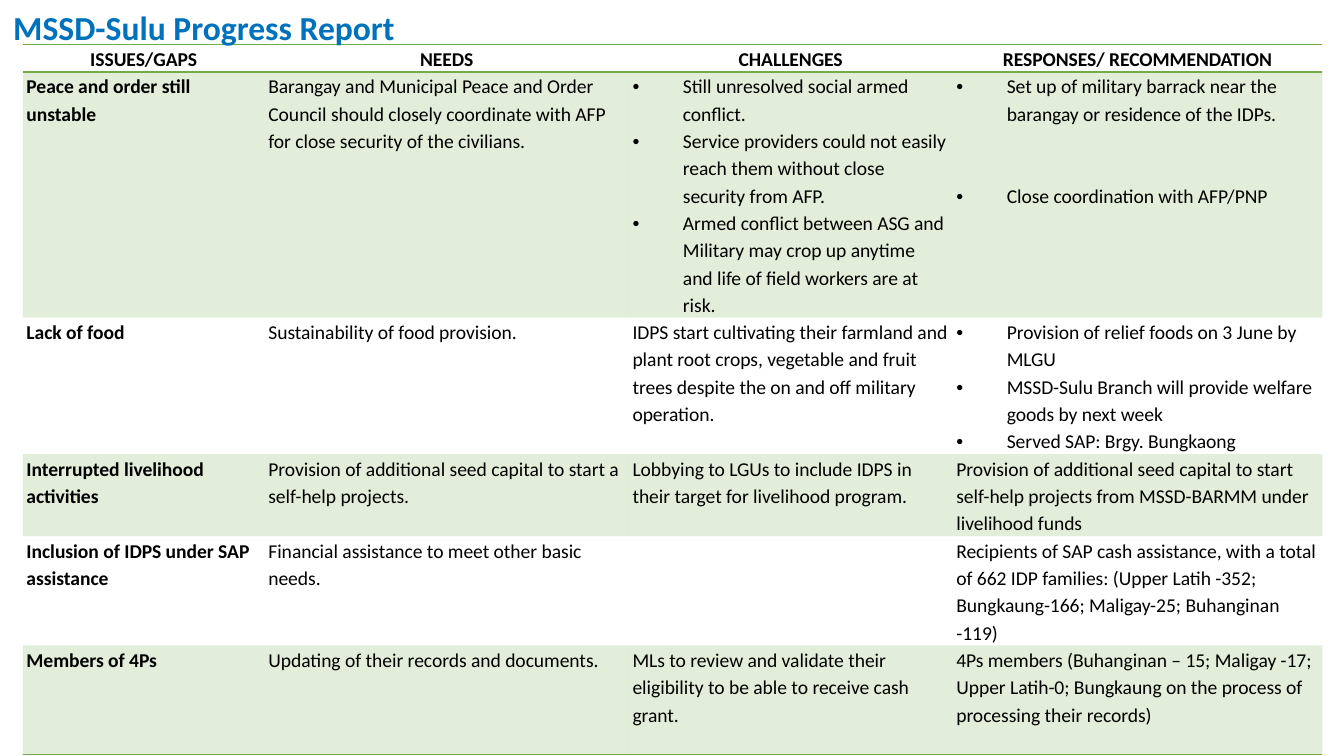
"""Build the progress report slide with its table of issues and responses."""
from dataclasses import dataclass
from typing import Sequence

from lxml.etree import SubElement
from pptx import Presentation
from pptx.dml.color import RGBColor as Rgb
from pptx.enum.text import MSO_ANCHOR as Anchor, PP_ALIGN as Align
from pptx.oxml.ns import qn
from pptx.util import Pt

HUES = {"ink": "000000", "title": "0072BC", "green": "70AD47"}
FONT = "Calibri"
SIZE = 10.5
LINE = 14.6
HANG = 27
COLS = (129.6, 195.1, 173.5, 198)
PLAIN = "{2D5ABB26-0587-4C30-8999-92F81FD0307C}"


@dataclass
class Para:
    text: str
    dot: bool = False
    gap: float = 0


@dataclass
class Row:
    lines: int
    cells: Sequence[Sequence[Para]]
    head: bool = False
    band: bool = False
    edges: str = ""


def one(text: str) -> list[Para]:
    """Return a cell of one plain paragraph."""
    return [Para(text)] if text else []


def dots(*texts: str) -> list[Para]:
    """Return a cell of bulleted paragraphs."""
    return [Para(text, True) for text in texts]


ROWS = [
    Row(1, [one("ISSUES/GAPS"), one("NEEDS"), one("CHALLENGES"),
            one("RESPONSES/ RECOMMENDATION")], head=True, edges="TB"),
    Row(9, [
        one("Peace and order still unstable"),
        one("Barangay and Municipal Peace and Order Council should closely "
            "coordinate with AFP for close security of the civilians."),
        dots("Still unresolved social armed conflict.",
             "Service providers could not easily reach them without close "
             "security from AFP.",
             "Armed conflict between ASG and Military may crop up anytime "
             "and life of field workers are at risk."),
        [Para("Set up of military barrack near the barangay or residence "
              "of the IDPs.", True),
         Para("Close coordination with AFP/PNP", True, 2 * LINE)],
    ], band=True),
    Row(5, [
        one("Lack of food"),
        one("Sustainability of food provision."),
        one("IDPS start cultivating their farmland and plant root crops, "
            "vegetable and fruit trees despite the on and off military "
            "operation."),
        dots("Provision of relief foods on 3 June by MLGU",
             "MSSD-Sulu Branch will provide welfare goods by next week",
             "Served SAP: Brgy. Bungkaong"),
    ]),
    Row(3, [
        one("Interrupted livelihood activities"),
        one("Provision of additional seed capital to start a self-help "
            "projects."),
        one("Lobbying to LGUs to include IDPS in their target for "
            "livelihood program."),
        one("Provision of additional seed capital to start self-help "
            "projects from MSSD-BARMM under livelihood funds"),
    ], band=True),
    Row(4, [
        one("Inclusion of IDPS under SAP assistance"),
        one("Financial assistance to meet other basic needs."),
        one(""),
        one("Recipients of SAP cash assistance, with a total of 662 IDP "
            "families: (Upper Latih -352; Bungkaung-166; Maligay-25; "
            "Buhanginan -119)"),
    ]),
    Row(4, [
        one("Members of 4Ps"),
        one("Updating of their records and documents."),
        one("MLs to review and validate their eligibility to be able to "
            "receive cash grant."),
        one("4Ps members (Buhanginan – 15; Maligay -17; Upper Latih-0; "
            "Bungkaung on the process of processing their records)"),
    ], band=True, edges="B"),
]


def add_run(para, text: str, size: float, hue: str, bold: bool) -> None:
    """Add one styled run to a paragraph."""
    run = para.add_run()
    run.text = text
    font = run.font
    font.name, font.size, font.bold = FONT, Pt(size), bold
    font.color.rgb = Rgb.from_string(HUES[hue])


def add_dot(para) -> None:
    """Give a paragraph a bullet with a hanging indent."""
    props = para._p.get_or_add_pPr()
    props.set("marL", str(Pt(HANG)))
    props.set("indent", str(-Pt(HANG)))
    SubElement(props, qn("a:buFont"), typeface="Arial")
    SubElement(props, qn("a:buChar"), char="•")


def add_edge(cell, side: str) -> None:
    """Draw a green line along one side of a cell."""
    props = cell._tc.get_or_add_tcPr()
    line = SubElement(props, qn(f"a:ln{side}"), w=str(Pt(1)))
    fill = SubElement(line, qn("a:solidFill"))
    SubElement(fill, qn("a:srgbClr"), val=HUES["green"])


def add_band(cell) -> None:
    """Fill a cell with green at one fifth strength."""
    cell.fill.solid()
    cell.fill.fore_color.rgb = Rgb.from_string(HUES["green"])
    tint = cell._tc.tcPr.find(f".//{qn('a:solidFill')}[last()]")
    tint = cell._tc.tcPr.findall(qn("a:solidFill"))[0][0]
    SubElement(tint, qn("a:alpha"), val="20000")


def fill_cell(cell, paras: Sequence[Para], row: Row, bold: bool) -> None:
    """Write and style one table cell."""
    cell.margin_left = cell.margin_right = Pt(2)
    cell.margin_top = cell.margin_bottom = Pt(0)
    cell.vertical_anchor = Anchor.MIDDLE if row.head else Anchor.TOP
    for side in row.edges:
        add_edge(cell, side)
    if row.band:
        add_band(cell)
    else:
        cell.fill.background()
    frame = cell.text_frame
    for i, item in enumerate(paras):
        para = frame.add_paragraph() if i else frame.paragraphs[0]
        para.line_spacing = 1.15
        if row.head:
            para.alignment = Align.CENTER
        if item.gap:
            para.space_before = Pt(item.gap)
        if item.dot:
            add_dot(para)
        add_run(para, item.text, SIZE, "ink", bold)


def add_grid(slide, rows: Sequence[Row]) -> None:
    """Add the report table."""
    high = LINE * sum(row.lines for row in rows)
    grid = slide.shapes.add_table(len(rows), len(COLS), Pt(12.2), Pt(23.8),
                                  Pt(sum(COLS)), Pt(high)).table
    grid.horz_banding = False
    grid._tbl.tblPr.find(qn("a:tableStyleId")).text = PLAIN
    for col, wide in zip(grid.columns, COLS):
        col.width = Pt(wide)
    for r, row in enumerate(rows):
        grid.rows[r].height = Pt(LINE * row.lines)
        for c, paras in enumerate(row.cells):
            fill_cell(grid.cell(r, c), paras, row, row.head or c == 0)


def add_title(slide, text: str) -> None:
    """Add the slide title."""
    box = slide.shapes.add_textbox(Pt(0), Pt(0), Pt(220.3), Pt(29))
    box.text_frame.word_wrap = False
    add_run(box.text_frame.paragraphs[0], text, 18, "title", True)


def main() -> None:
    """Build and save the slide."""
    deck = Presentation()
    deck.slide_width, deck.slide_height = Pt(720), Pt(405)
    slide = deck.slides.add_slide(deck.slide_layouts[6])
    add_grid(slide, ROWS)
    add_title(slide, "MSSD-Sulu Progress Report")
    deck.save("out.pptx")


if __name__ == "__main__":
    main()
